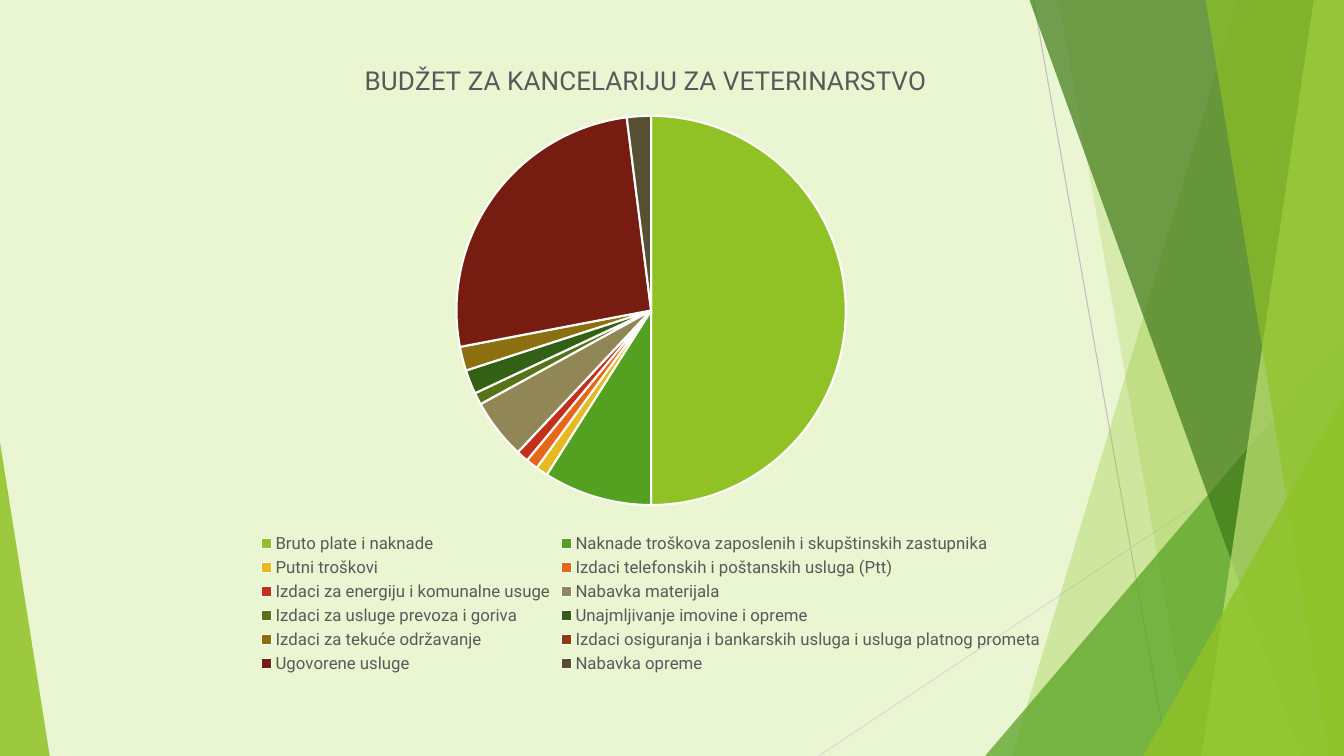
from lxml import etree
from pptx import Presentation
from pptx.chart.data import CategoryChartData
from pptx.dml.color import RGBColor
from pptx.enum.chart import XL_CHART_TYPE as CHART, XL_LEGEND_POSITION as LEGEND
from pptx.enum.shapes import MSO_CONNECTOR as CONN, MSO_SHAPE as SHAPE
from pptx.oxml import parse_xml
from pptx.oxml.ns import nsdecls, qn
from pptx.util import Inches, Pt

W, H = Inches(13.33), Inches(7.5)
FONT = "Roboto"
TITLE = "BUDŽET ZA KANCELARIJU ZA VETERINARSTVO"
COLORS = {
    "back": "EAF6D1", "white": "FFFFFF", "text": "595959",
    "gray": "BFBFBF", "pale_gray": "D9D9D9",
    "lime": "90C226", "green": "54A021", "forest": "3F7819", "light": "C0E474",
    "yellow": "E6B91E", "orange": "E76618", "red": "C42F1A", "khaki": "918655",
    "olive": "567417", "dark_green": "326014", "ochre": "8C7010",
    "rust": "8B3D0E", "maroon": "761C10", "umber": "575033",
}
BUDGET = [
    ("Bruto plate i naknade", 50, "lime"),
    ("Naknade troškova zaposlenih i skupštinskih zastupnika", 9, "green"),
    ("Putni troškovi", 1, "yellow"),
    ("Izdaci telefonskih i poštanskih usluga (Ptt)", 1, "orange"),
    ("Izdaci za energiju i komunalne usuge", 1, "red"),
    ("Nabavka materijala", 5, "khaki"),
    ("Izdaci za usluge prevoza i goriva", 1, "olive"),
    ("Unajmljivanje imovine i opreme", 2, "dark_green"),
    ("Izdaci za tekuće održavanje", 2, "ochre"),
    ("Izdaci osiguranja i bankarskih usluga i usluga platnog prometa", 0, "rust"),
    ("Ugovorene usluge", 26, "maroon"),
    ("Nabavka opreme", 2, "umber"),
]


def x(share):
    return round(W * share / 100)


def y(share):
    return round(H * share / 100)


def rgb(name):
    return RGBColor.from_string(COLORS[name])


def paint(sp, color, opacity):
    sp.shadow.inherit = False
    sp.line.fill.background()
    sp.fill.solid()
    sp.fill.fore_color.rgb = rgb(color)
    clr = sp._element.spPr.find(qn("a:solidFill"))[0]
    etree.SubElement(clr, qn("a:alpha"), val=str(opacity * 1000))


def add_line(s, start, end, color):
    ln = s.shapes.add_connector(CONN.STRAIGHT, x(start[0]), y(start[1]), x(end[0]), y(end[1]))
    ln.line.color.rgb = rgb(color)
    ln.line.width = Pt(0.75)
    etree.SubElement(ln._element.spPr, qn("a:effectLst"))


def add_band(s, top, bottom, color, opacity):
    fb = s.shapes.build_freeform(x(top), 0)
    fb.add_line_segments([(W, 0), (W, H), (x(bottom), H)])
    paint(fb.convert_to_shape(), color, opacity)


def add_corner(s, left, right, top, apex, color, opacity):
    sp = s.shapes.add_shape(SHAPE.ISOSCELES_TRIANGLE, x(left), y(top), x(right - left), y(100 - top))
    sp.adjustments[0] = apex
    paint(sp, color, opacity)


def set_font(font, size, color):
    font.name = FONT
    font.size = Pt(size)
    font.bold = False
    font.color.rgb = rgb(color)


def layout(**shares):
    target = '<c:layoutTarget val="inner"/>' if "w" in shares else ""
    modes = "".join(f'<c:{k}Mode val="edge"/>' for k in "xy")
    sizes = "".join(f'<c:{k} val="{v}"/>' for k, v in shares.items())
    return parse_xml(f'<c:layout {nsdecls("c")}><c:manualLayout>{target}{modes}{sizes}'
                     '</c:manualLayout></c:layout>')


def place(parent, new, before):
    old = parent.find(qn("c:layout"))
    if old is not None:
        parent.remove(old)
    parent.find(qn(before)).addprevious(new)


def add_budget_pie(s):
    data = CategoryChartData()
    data.categories = [name for name, _, _ in BUDGET]
    data.add_series(TITLE, [value for _, value, _ in BUDGET])
    chart = s.shapes.add_chart(CHART.PIE, x(5.1), y(5.2), x(86.7), y(84.4), data).chart
    set_font(chart.font, 10, "text")

    chart.has_title = True
    tf = chart.chart_title.text_frame
    tf.text = TITLE
    set_font(tf.paragraphs[0].font, 18.6, "text")
    place(chart.chart_title._element, layout(x=0.25, y=0.03), "c:overlay")
    chart.chart_title.include_in_layout = False

    chart.has_legend = True
    chart.legend.position = LEGEND.BOTTOM
    chart.legend.include_in_layout = False
    set_font(chart.legend.font, 12, "text")

    plot = chart.plots[0]
    plot.vary_by_categories = True
    place(plot._element.getparent(), layout(x=0.33, y=0.12, w=0.34, h=0.61), "c:pieChart")
    for i, (_, _, color) in enumerate(BUDGET):
        fmt = plot.series[0].points[i].format
        fmt.fill.solid()
        fmt.fill.fore_color.rgb = rgb(color)
        fmt.line.color.rgb = rgb("white")
        fmt.line.width = Pt(1.5)


def main():
    prs = Presentation()
    prs.slide_width, prs.slide_height = W, H
    s = prs.slides.add_slide(prs.slide_layouts[6])
    s.background.fill.solid()
    s.background.fill.fore_color.rgb = rgb("back")

    add_line(s, (76.9, 0), (86.87, 100), "gray")
    add_line(s, (100, 53.7), (60.92, 100), "pale_gray")
    add_band(s, 92.1, 75.3, "lime", 30)
    add_band(s, 78.76, 88.75, "lime", 20)
    add_corner(s, 73.3, 100, 44.4, 1, "green", 72)
    add_band(s, 76.6, 96.85, "forest", 70)
    add_band(s, 97.75, 89.4, "light", 70)
    add_band(s, 89.7, 98.87, "lime", 65)
    add_corner(s, 85.05, 100, 52.4, 1, "lime", 80)
    add_corner(s, 0, 3.7, 58.5, 0, "lime", 85)
    add_budget_pie(s)
    prs.save("out.pptx")


if __name__ == "__main__":
    main()
